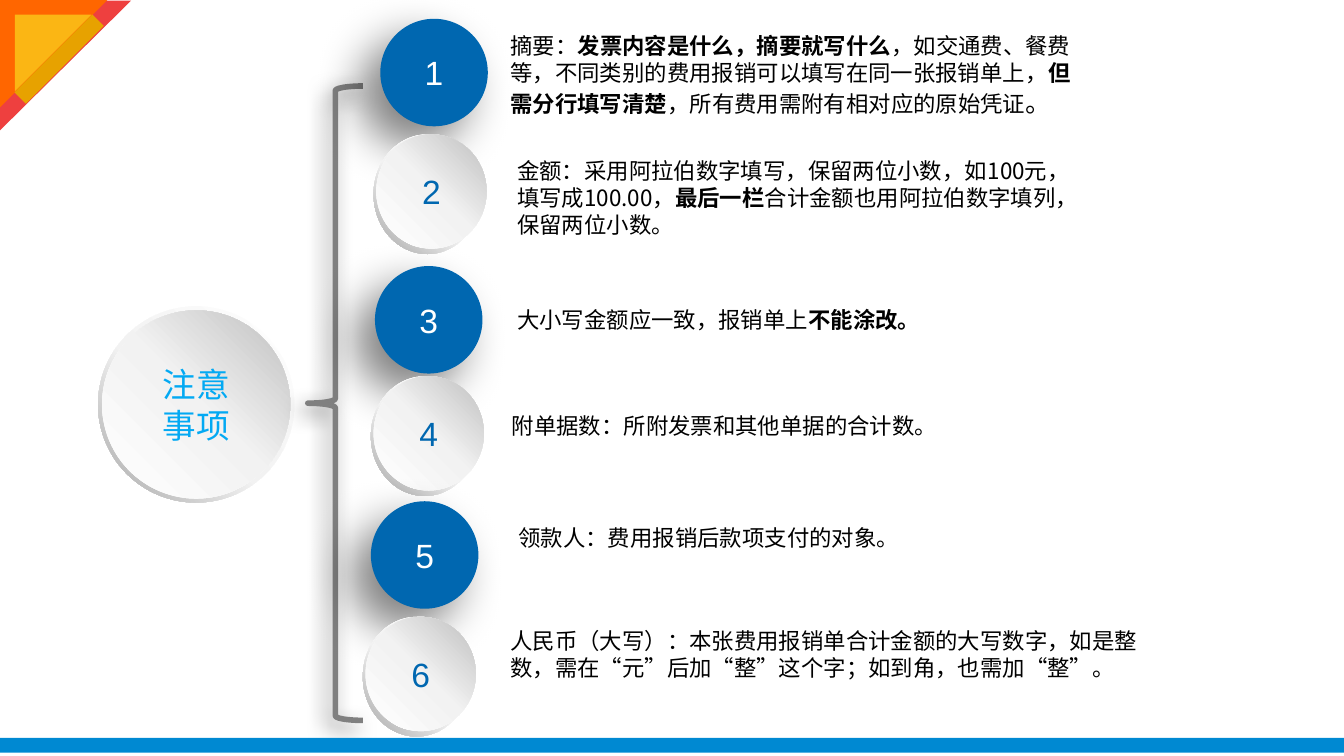
"""Build the slide of six points to note when filling in an expense form."""
from lxml import etree
from pptx import Presentation
from pptx.dml.color import RGBColor
from pptx.enum.shapes import MSO_SHAPE
from pptx.enum.text import MSO_ANCHOR, PP_ALIGN
from pptx.oxml import parse_xml
from pptx.oxml.ns import nsdecls, qn
from pptx.util import Inches, Pt

OVAL, DONUT, BRACE = MSO_SHAPE.OVAL, MSO_SHAPE.DONUT, MSO_SHAPE.LEFT_BRACE
RECT, TRIANGLE = MSO_SHAPE.RECTANGLE, MSO_SHAPE.RIGHT_TRIANGLE
MIDDLE, CENTER = MSO_ANCHOR.MIDDLE, PP_ALIGN.CENTER

BLACK = RGBColor(0x00, 0x00, 0x00)
WHITE = RGBColor(0xFF, 0xFF, 0xFF)
BLUE = RGBColor(0x00, 0x67, 0xB0)
SKY = RGBColor(0x03, 0xA9, 0xF3)
FOOTER_BLUE = RGBColor(0x00, 0x89, 0xD2)
GREY = RGBColor(0x80, 0x80, 0x80)
RED = RGBColor(0xEE, 0x40, 0x3F)
ORANGE = RGBColor(0xFF, 0x66, 0x00)
YELLOW = RGBColor(0xFB, 0xB6, 0x14)
GOLD = RGBColor(0xE7, 0xA2, 0x00)
PALE = RGBColor(0xF2, 0xF2, 0xF2)
SILVER = RGBColor(0xBF, 0xBF, 0xBF)
STEEL = RGBColor(0xA6, 0xA6, 0xA6)

LATIN, CJK = "Arial", "Noto Sans CJK SC"
RING_FILL = (((0, WHITE), (55, PALE), (100, STEEL)), 135)
BALL_FILL = (((0, WHITE), (51, PALE), (100, SILVER)), 315)

CORNER = [
    (TRIANGLE, (0, 0, 0.97, 0.98), 90, RED),
    (TRIANGLE, (0, 0, 0.8, 0.8), 90, ORANGE),
    (TRIANGLE, (0.11, 0.11, 0.57, 0.57), 90, YELLOW),
    (RECT, (0.38, 0.03, 0.12, 0.82), 45, GOLD),
]
NUMBER_PLACES = [(2.83, 0.14), (2.8, 1), (2.79, 1.98),
                 (2.78, 2.8), (2.76, 3.73), (2.72, 4.59)]
NOTES = [
    ((3.7, 0.19, 4.42, 0.74), True, [
        ("摘要：", {}),
        ("发票内容是什么，摘要就写什么", {"bold": True}),
        ("，如交通费、餐费等，不同类别的费用报销可以填写在同一张报销单上，", {}),
        ("但需分行填写清楚", {"bold": True}),
        ("，所有费用需附有相对应的原始凭证", {}),
        ("。", {"size": Pt(14)})]),
    ((3.75, 1.12, 4.42, 1.01), True, [
        ("金额：采用阿拉伯数字填写，保留两位小数，如100元，填写成100.00，", {}),
        ("最后一栏", {"bold": True}),
        ("合计金额也用阿拉伯数字填列，保留两位小数。", {})]),
    ((3.75, 2.23, 3.23, 0.3), False, [
        ("大小写金额应一致，报销单上", {}),
        ("不能涂改。", {"bold": True})]),
    ((3.71, 3.02, 3.4, 0.3), False, [
        ("附单据数：所附发票和其他单据的合计数。", {})]),
    ((3.76, 3.85, 3.06, 0.3), False, [
        ("领款人：费用报销后款项支付的对象。", {})]),
    ((3.7, 4.62, 5, 0.5), True, [
        ("人民币（大写）：本张费用报销单合计金额的大写数字，如是整数，"
         "需在“元”后加“整”这个字；如到角，也需加“整”。", {})]),
]


def add_run(paragraph, text, font_name, color, **formats):
    """Add a run in the given font, with the CJK font for Chinese."""
    run = paragraph.add_run()
    run.text = text
    run.font.color.rgb = color
    for name, value in {"name": font_name, **formats}.items():
        setattr(run.font, name, value)
    east_asian = etree.SubElement(run.font._element, qn("a:ea"))
    east_asian.set("typeface", CJK)


def add_figure(shapes, preset, place, color=None, rotation=0):
    """Add a borderless preset shape, filled if a colour is given."""
    figure = shapes.add_shape(preset, *map(Inches, place))
    figure.shadow.inherit = False
    figure.rotation = rotation
    figure.line.fill.background()
    if color is None:
        figure.fill.background()
    else:
        figure.fill.solid()
        figure.fill.fore_color.rgb = color
    return figure


def set_gradient(figure, stops, angle):
    """Replace the fill of a figure by a linear gradient."""
    stop_xml = "".join(
        f'<a:gs pos="{position * 1000}"><a:srgbClr val="{color}"/></a:gs>'
        for position, color in stops)
    gradient = parse_xml(
        f'<a:gradFill {nsdecls("a")}><a:gsLst>{stop_xml}</a:gsLst>'
        f'<a:lin ang="{angle * 60000}" scaled="0"/></a:gradFill>')
    properties = figure._element.spPr
    properties.replace(properties.find(qn("a:noFill")), gradient)


def set_shadow(figure, blur, distance):
    """Give a figure a half-transparent shadow to the lower left."""
    effects = figure._element.spPr.find(qn("a:effectLst"))
    effects.append(parse_xml(
        f'<a:outerShdw {nsdecls("a")} blurRad="{Pt(blur)}" '
        f'dist="{Pt(distance)}" dir="8100000" algn="tr" rotWithShape="0">'
        '<a:srgbClr val="000000"><a:alpha val="50000"/></a:srgbClr>'
        '</a:outerShdw>'))


def set_label(figure, lines, color):
    """Centre the lines of a label in a figure."""
    frame = figure.text_frame
    frame.vertical_anchor = MIDDLE
    for index, line in enumerate(lines):
        paragraph = frame.add_paragraph() if index else frame.paragraphs[0]
        paragraph.alignment = CENTER
        add_run(paragraph, line, LATIN, color, size=Pt(18))


def add_ball(slide, ring_place, ball_place, lines, color):
    """Add a shaded ball on a ring, grouped."""
    shapes = slide.shapes.add_group_shape().shapes
    ring = add_figure(shapes, DONUT, ring_place)
    ring.adjustments[0] = 0.049
    set_gradient(ring, *RING_FILL)
    ball = add_figure(shapes, OVAL, ball_place)
    set_gradient(ball, *BALL_FILL)
    set_label(ball, lines, color)


def add_number(slide, number, left, top):
    """Add a blue disc for an odd number or a shaded ball for an even one."""
    if number % 2:
        disc = add_figure(slide.shapes, OVAL, (left, top, 0.8, 0.8), BLUE)
        set_shadow(disc, 25, 15)
        set_label(disc, [str(number)], WHITE)
    else:
        add_ball(slide, (left - 0.02, top, 0.8, 0.89),
                 (left, top, 0.82, 0.85), [str(number)], BLUE)


def add_brace(slide):
    """Add the brace that spans the numbers."""
    brace = add_figure(slide.shapes, BRACE, (2.29, 0.64, 0.41, 4.72))
    brace.line.color.rgb = GREY
    brace.line.width = Pt(3)
    set_shadow(brace, 11, 5)


def add_note(slide, place, wraps, runs):
    """Add the text of one point."""
    frame = slide.shapes.add_textbox(*map(Inches, place)).text_frame
    frame.word_wrap = wraps
    for text, formats in runs:
        add_run(frame.paragraphs[0], text, CJK, BLACK,
                **{"size": Pt(12), **formats})


def main():
    """Build and save the slide."""
    presentation = Presentation()
    presentation.slide_width = Inches(10)
    presentation.slide_height = Inches(10 * 9 / 16)
    slide = presentation.slides.add_slide(presentation.slide_layouts[6])

    add_ball(slide, (0.73, 2.28, 1.46, 1.46), (0.76, 2.31, 1.4, 1.4),
             ["注意", "事项"], SKY)
    add_brace(slide)
    for number, (left, top) in enumerate(NUMBER_PLACES, 1):
        add_number(slide, number, left, top)
    add_figure(slide.shapes, RECT, (0, 5.49, 10, 0.11), FOOTER_BLUE)
    for preset, place, rotation, color in CORNER:
        add_figure(slide.shapes, preset, place, color, rotation)
    for place, wraps, runs in NOTES:
        add_note(slide, place, wraps, runs)
    presentation.save("out.pptx")


if __name__ == "__main__":
    main()
